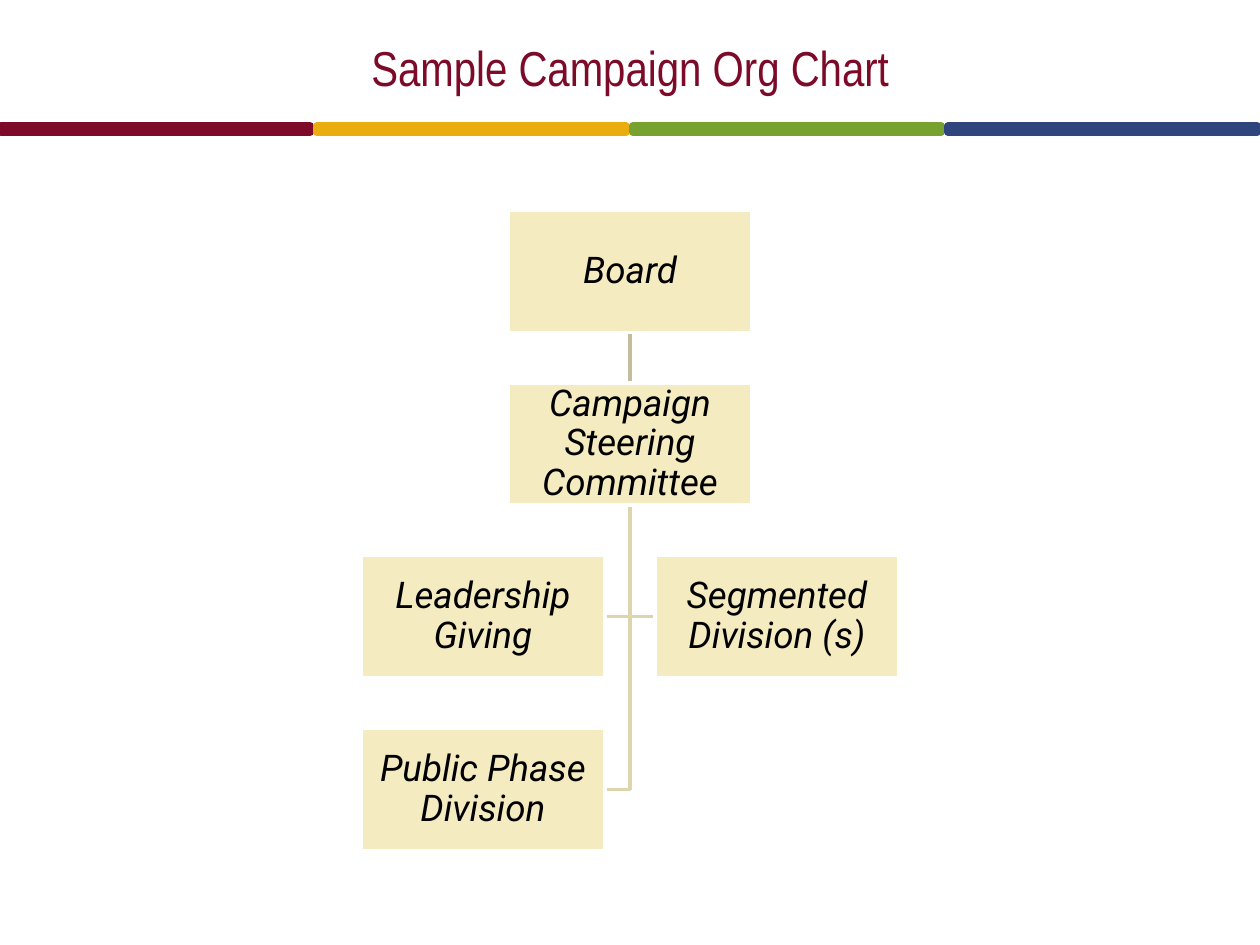
from pptx import Presentation
from pptx.dml.color import RGBColor
from pptx.enum.shapes import MSO_CONNECTOR, MSO_SHAPE
from pptx.enum.text import MSO_ANCHOR, MSO_AUTO_SIZE, PP_ALIGN
from pptx.oxml.ns import qn
from pptx.util import Pt

RECTANGLE = MSO_SHAPE.RECTANGLE
STRAIGHT = MSO_CONNECTOR.STRAIGHT
CENTER = PP_ALIGN.CENTER
MIDDLE = MSO_ANCHOR.MIDDLE
BOTTOM_SIDE, TOP_SIDE = 2, 0

COLORS = {
    "maroon": "7C0A28", "gold": "E9AD10", "green": "78A22F", "blue": "2E467D",
    "cream": "F5EBC1", "branch": "DED5AF", "trunk": "C4BC9B",
    "white": "FFFFFF", "black": "000000",
}

# Chart grid, in points
MIDLINE = 360
BOX_WIDTH, BOX_HEIGHT = 139.2, 69.8
HALF_GAP = 14.4
FIRST_TOP, ROW_PITCH = 120.2, 98.65
LEFT = MIDLINE - HALF_GAP - BOX_WIDTH
CENTRAL = MIDLINE - BOX_WIDTH / 2
RIGHT = MIDLINE + HALF_GAP


def color(name):
    return RGBColor.from_string(COLORS[name])


def row_top(row):
    return FIRST_TOP + row * ROW_PITCH


def set_line(shape, name, width):
    shape.line.color.rgb = color(name)
    shape.line.width = Pt(width)


def write(shape, text, name, font, paragraph):
    para = shape.text_frame.paragraphs[0]
    for key, value in paragraph.items():
        setattr(para, key, value)
    span = para.add_run()
    span.text = text
    for key, value in font.items():
        setattr(span.font, key, value)
    span.font.color.rgb = color(name)


def add_rectangle(page, left, top, width, height, fill, line, line_width):
    box = page.shapes.add_shape(RECTANGLE, Pt(left), Pt(top), Pt(width), Pt(height))
    box.shadow.inherit = False
    box.fill.solid()
    box.fill.fore_color.rgb = color(fill)
    set_line(box, line, line_width)
    return box


def add_title(page, text):
    box = page.shapes.add_textbox(Pt(105), Pt(18), Pt(510), Pt(41.2))
    box.text_frame.word_wrap = True
    box.text_frame.auto_size = MSO_AUTO_SIZE.SHAPE_TO_FIT_TEXT
    write(box, text, "maroon", {"name": "Arial Narrow", "size": Pt(28)},
          {"alignment": CENTER})


def add_stripe(page, names):
    for index, name in enumerate(names):
        add_rectangle(page, 0.7 + index * 180.4, 72, 176.4, 3.6, name, name, 4.5)


def add_branch(page, row, end):
    """Line down from the committee, then sideways to a box in the row."""
    turn = row_top(row) + BOX_HEIGHT / 2
    builder = page.shapes.build_freeform(Pt(MIDLINE), Pt(row_top(1) + BOX_HEIGHT))
    builder.add_line_segments(
        [(Pt(MIDLINE), Pt(turn)), (Pt(end), Pt(turn))], close=False)
    branch = builder.convert_to_shape()
    branch.shadow.inherit = False
    branch.fill.background()
    set_line(branch, "branch", 2)


def add_trunk(page):
    trunk = page.shapes.add_connector(STRAIGHT, 0, 0, 0, 0)
    properties = trunk._element.spPr
    set_line(trunk, "trunk", 2)
    properties.append(properties.makeelement(qn("a:effectLst"), {}))
    return trunk


def add_unit(page, text, left, row):
    box = add_rectangle(page, left, row_top(row), BOX_WIDTH, BOX_HEIGHT,
                        "cream", "white", 2)
    frame = {"word_wrap": True, "vertical_anchor": MIDDLE}
    for side in ("left", "top", "right", "bottom"):
        frame[f"margin_{side}"] = Pt(0.95)
    for key, value in frame.items():
        setattr(box.text_frame, key, value)
    write(box, text, "black", {"name": "Roboto", "size": Pt(21), "italic": True},
          {"alignment": CENTER, "line_spacing": 0.9})
    return box


def main():
    deck = Presentation()
    deck.slide_width, deck.slide_height = Pt(720), Pt(540)
    page = deck.slides.add_slide(deck.slide_layouts[6])

    # Heading
    add_stripe(page, ("maroon", "gold", "green", "blue"))
    add_title(page, "Sample Campaign Org Chart")

    # Lines, behind the boxes
    for row, end in ((3, MIDLINE - HALF_GAP), (2, RIGHT), (2, MIDLINE - HALF_GAP)):
        add_branch(page, row, end)
    trunk = add_trunk(page)

    # Boxes
    board = add_unit(page, "Board", CENTRAL, 0)
    committee = add_unit(page, "Campaign Steering Committee", CENTRAL, 1)
    add_unit(page, "Leadership Giving", LEFT, 2)
    add_unit(page, "Segmented Division (s)", RIGHT, 2)
    add_unit(page, "Public Phase Division", LEFT, 3)
    trunk.begin_connect(board, BOTTOM_SIDE)
    trunk.end_connect(committee, TOP_SIDE)

    deck.save("out.pptx")


if __name__ == "__main__":
    main()
